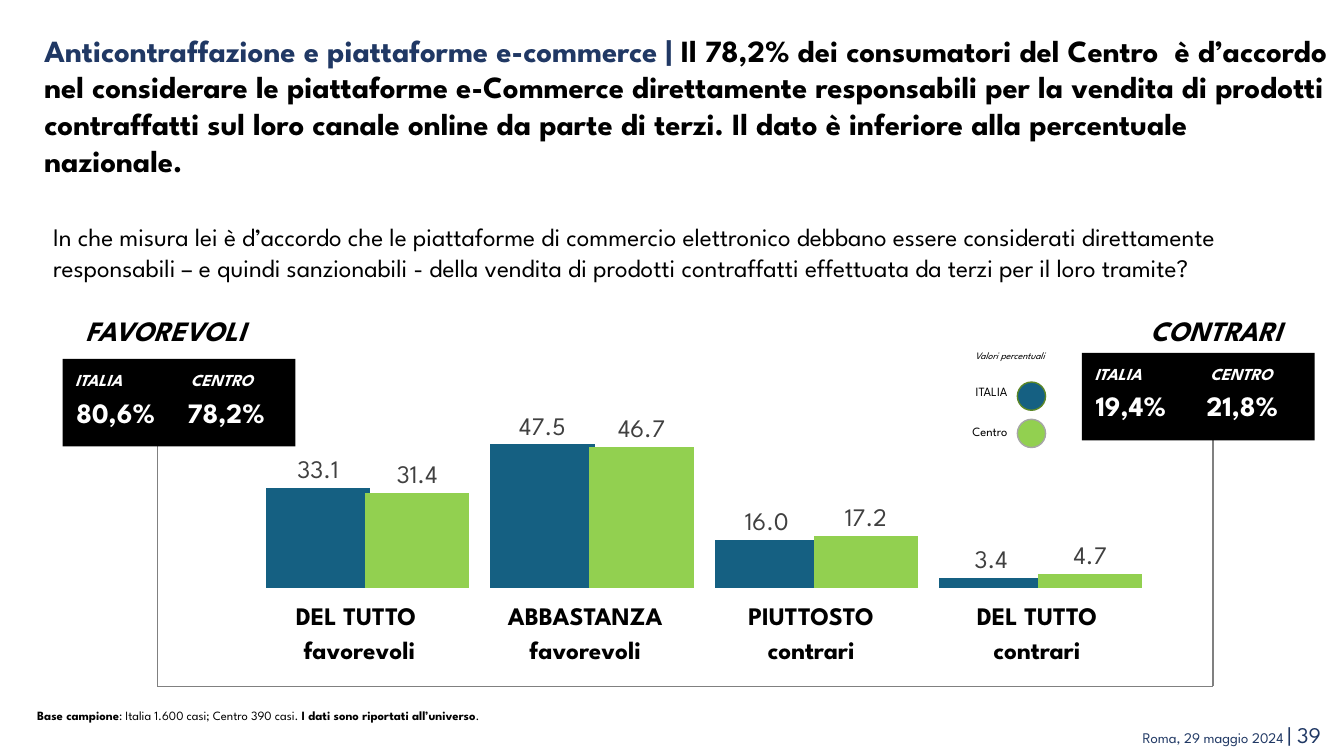
from lxml import etree
from pptx import Presentation
from pptx.chart.data import CategoryChartData
from pptx.dml.color import RGBColor
from pptx.enum.chart import XL_CHART_TYPE as ChartType, XL_LABEL_POSITION as LabelPos
from pptx.enum.shapes import MSO_CONNECTOR as Connector, MSO_SHAPE as Shape
from pptx.enum.text import PP_ALIGN as Align
from pptx.oxml import parse_xml
from pptx.oxml.ns import nsdecls, qn
from pptx.util import Inches, Pt

FONT = "League Spartan"
BLACK, WHITE, NAVY, GREY = "000000", "FFFFFF", "203864", "808080"
ITALIA, CENTRO = "156082", "92D050"


def rgb(code):
    """Turn a hex string into a colour."""
    return RGBColor.from_string(code)


def run(text, size, color=BLACK, bold=False, italic=False):
    """Describe one run of text."""
    return text, size, color, bold, italic


def add_text(slide, box, *paragraphs, align=Align.LEFT, spacing=None, inset=(0.1, 0.05)):
    """Place a text box holding paragraphs, each a list of runs."""
    frame = slide.shapes.add_textbox(*map(Inches, box)).text_frame
    frame.word_wrap = True
    frame.margin_left = frame.margin_right = Inches(inset[0])
    frame.margin_top = frame.margin_bottom = Inches(inset[1])
    for index, runs in enumerate(paragraphs):
        paragraph = frame.add_paragraph() if index else frame.paragraphs[0]
        paragraph.alignment = align
        if spacing:
            paragraph.line_spacing = spacing
        for text, size, color, bold, italic in runs:
            piece = paragraph.add_run()
            piece.text = text
            font = piece.font
            font.name, font.size, font.bold, font.italic = FONT, Pt(size), bold, italic
            font.color.rgb = rgb(color)


def add_filled(slide, kind, box, fill, outline=None):
    """Place a preset shape with a solid fill and an optional outline."""
    shape = slide.shapes.add_shape(kind, *map(Inches, box))
    shape.shadow.inherit = False
    shape.fill.solid()
    shape.fill.fore_color.rgb = rgb(fill)
    if outline:
        shape.line.color.rgb = rgb(outline)
        shape.line.width = Pt(1)
    else:
        shape.line.fill.background()


def add_heading(slide, left, top, width):
    """Write the title and the survey question."""
    add_text(slide, (left, top, width, 1.56), [
        run("Anticontraffazione e piattaforme e-commerce | ", 22, NAVY, True),
        run("Il 78,2% dei consumatori del Centro  è d’accordo nel considerare le piattaforme "
            "e-Commerce direttamente responsabili per la vendita di prodotti contraffatti sul "
            "loro canale online da parte di terzi. Il dato è inferiore alla percentuale "
            "nazionale.", 22, BLACK, True)], inset=(0.07, 0.04))
    add_text(slide, (left + 0.06, top + 1.88, 12.3, 1.01), [
        run("In che misura lei è d’accordo che le piattaforme di commercio elettronico debbano "
            "essere considerati direttamente responsabili – e quindi sanzionabili - della "
            "vendita di prodotti contraffatti effettuata da terzi per il loro tramite?", 18)])


def add_bracket(slide, left, top, right, bottom):
    """Draw the three lines that tie the two totals together."""
    corners = [(left, top), (left, bottom), (right, bottom), (right, top)]
    for start, end in zip(corners, corners[1:]):
        line = slide.shapes.add_connector(Connector.STRAIGHT, *map(Inches, start + end))
        line.line.color.rgb = rgb(GREY)
        line.line.width = Pt(1)
        etree.SubElement(line._element.spPr, qn("a:effectLst"))


def add_total(slide, left, top, heading, heading_center, italia, centro):
    """Build a black panel with its heading and the two totals."""
    add_text(slide, (heading_center - 1.09, 3.03, 2.18, 0.44),
             [run(heading, 20, BLACK, True, True)], align=Align.CENTER, spacing=1.1)
    add_filled(slide, Shape.RECTANGLE, (left, top, 2.31, 0.87), BLACK)
    columns = [("ITALIA", 0.36, italia, 0.04), ("CENTRO", 1.58, centro, 1.14)]
    for area, center, value, offset in columns:
        add_text(slide, (left + center - 0.67, top + 0.06, 1.34, 0.32),
                 [run(area, 12, WHITE, True, True)], align=Align.CENTER)
        add_text(slide, (left + offset, top + 0.31, 1.4, 0.44), [run(value, 20, WHITE, True)])


def add_legend(slide, left, top):
    """Build the legend with its unit note."""
    add_text(slide, (left, top, 1.95, 0.22),
             [run("Valori percentuali", 7, italic=True)], align=Align.RIGHT)
    entries = [("ITALIA", ITALIA, "5C8727", 0.34), ("Centro", CENTRO, "A6A6A6", 0.74)]
    for index, (area, fill, outline, label_top) in enumerate(entries):
        dot_top = top + 0.37 * (index + 1)
        add_filled(slide, Shape.OVAL, (left + 1.58, dot_top, 0.28, 0.28), fill, outline)
        add_text(slide, (left + 0.12, top + label_top, 1.46, 0.25),
                 [run(area, 9)], align=Align.RIGHT)


def add_answers(slide, left, top, width, height):
    """Build the column chart and the answer names under it."""
    answers = [["DEL TUTTO ", "favorevoli"], ["ABBASTANZA favorevoli"],
               ["PIUTTOSTO contrari"], ["DEL TUTTO contrari"]]
    data = CategoryChartData(number_format="0.0")
    data.categories = ["1", "2", "3", "4"]
    data.add_series("Italia", (33.1, 47.5, 16, 3.4))
    data.add_series("Centro", (31.4, 46.7, 17.2, 4.7))
    chart = slide.shapes.add_chart(
        ChartType.COLUMN_CLUSTERED, *map(Inches, (left, top, width, height)), data).chart
    chart.has_legend = chart.has_title = False
    chart.font.name, chart.font.size = "Arial", Pt(10)
    chart.font.color.rgb = rgb(BLACK)
    chart.category_axis.visible = chart.value_axis.visible = False
    chart.value_axis.has_major_gridlines = False
    chart.value_axis.minimum_scale, chart.value_axis.maximum_scale = 0, 50

    plot = chart.plots[0]
    plot.gap_width, plot.overlap, plot.vary_by_categories = 20, 5, False
    for series, color in zip(plot.series, (ITALIA, CENTRO)):
        series.format.fill.solid()
        series.format.fill.fore_color.rgb = rgb(color)
        labels = series.data_labels
        labels.show_value, labels.position = True, LabelPos.OUTSIDE_END
        labels.number_format, labels.number_format_is_linked = "0.0", False
        labels.font.name, labels.font.size = FONT, Pt(18)
        labels.font.color.rgb = rgb("404040")

    area = chart._chartSpace.chart.plotArea
    for layout in area.findall(qn("c:layout")):
        area.remove(layout)
    area.insert(0, parse_xml(
        f'<c:layout {nsdecls("c")}><c:manualLayout><c:layoutTarget val="inner"/>'
        '<c:xMode val="edge"/><c:yMode val="edge"/><c:x val="0.022"/><c:y val="0.183"/>'
        '<c:w val="0.956"/><c:h val="0.62"/></c:manualLayout></c:layout>'))

    for index, lines in enumerate(answers):
        add_text(slide, (left + 0.08 + 2.24 * index, top + 1.99, 2.31, 0.74),
                 *[[run(line, 18, bold=True)] for line in lines],
                 align=Align.CENTER, spacing=1.1)


def add_footer(slide, top):
    """Write the sample note, the date and the page number."""
    add_text(slide, (0.27, top, 12.54, 0.25), [
        run("Base campione", 9, bold=True),
        run(": Italia 1.600 casi; Centro 390 casi. ", 9),
        run("I dati sono riportati all’universo", 9, bold=True),
        run(".", 9)], align=Align.JUSTIFY, spacing=1.1)
    add_text(slide, (6.27, top + 0.15, 6.93, 0.37), [
        run("Roma, 29 maggio 2024 ", 10.5, NAVY), run("| 39", 16, NAVY)], align=Align.RIGHT)


def main():
    """Assemble the slide and save it."""
    deck = Presentation()
    deck.slide_width, deck.slide_height = Inches(13.33), Inches(7.5)
    slide = deck.slides.add_slide(deck.slide_layouts[6])
    add_heading(slide, 0.37, 0.27, 12.91)
    add_bracket(slide, 1.56, 4.36, 12.03, 6.81)
    add_legend(slide, 8.51, 3.42)
    add_total(slide, 0.62, 3.56, "FAVOREVOLI", 1.64, "80,6%", "78,2%")
    add_total(slide, 10.73, 3.5, "CONTRARI", 12.06, "19,4%", "21,8%")
    add_answers(slide, 2.33, 3.89, 9.31, 2.42)
    add_footer(slide, 6.96)
    deck.save("out.pptx")


if __name__ == "__main__":
    main()
